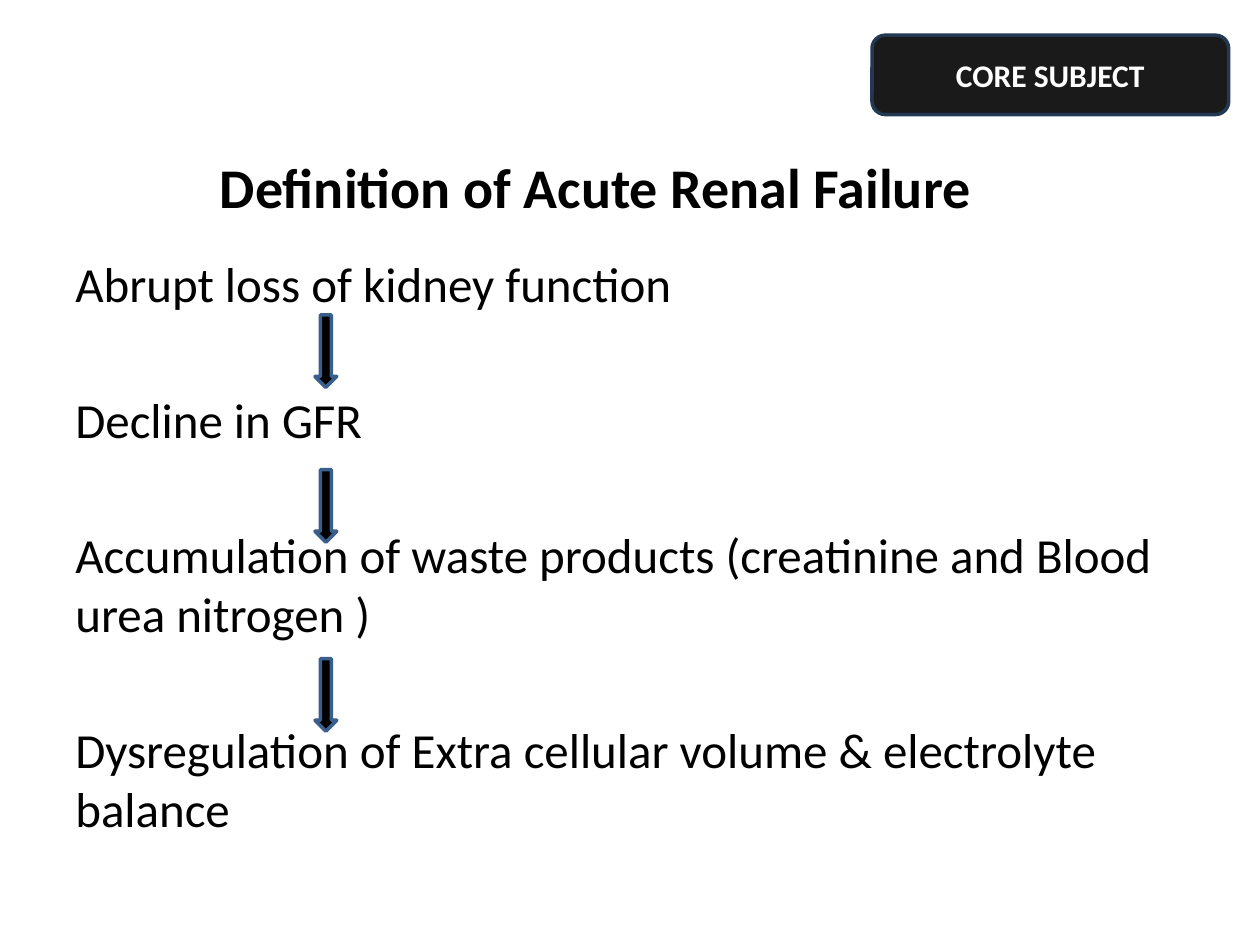
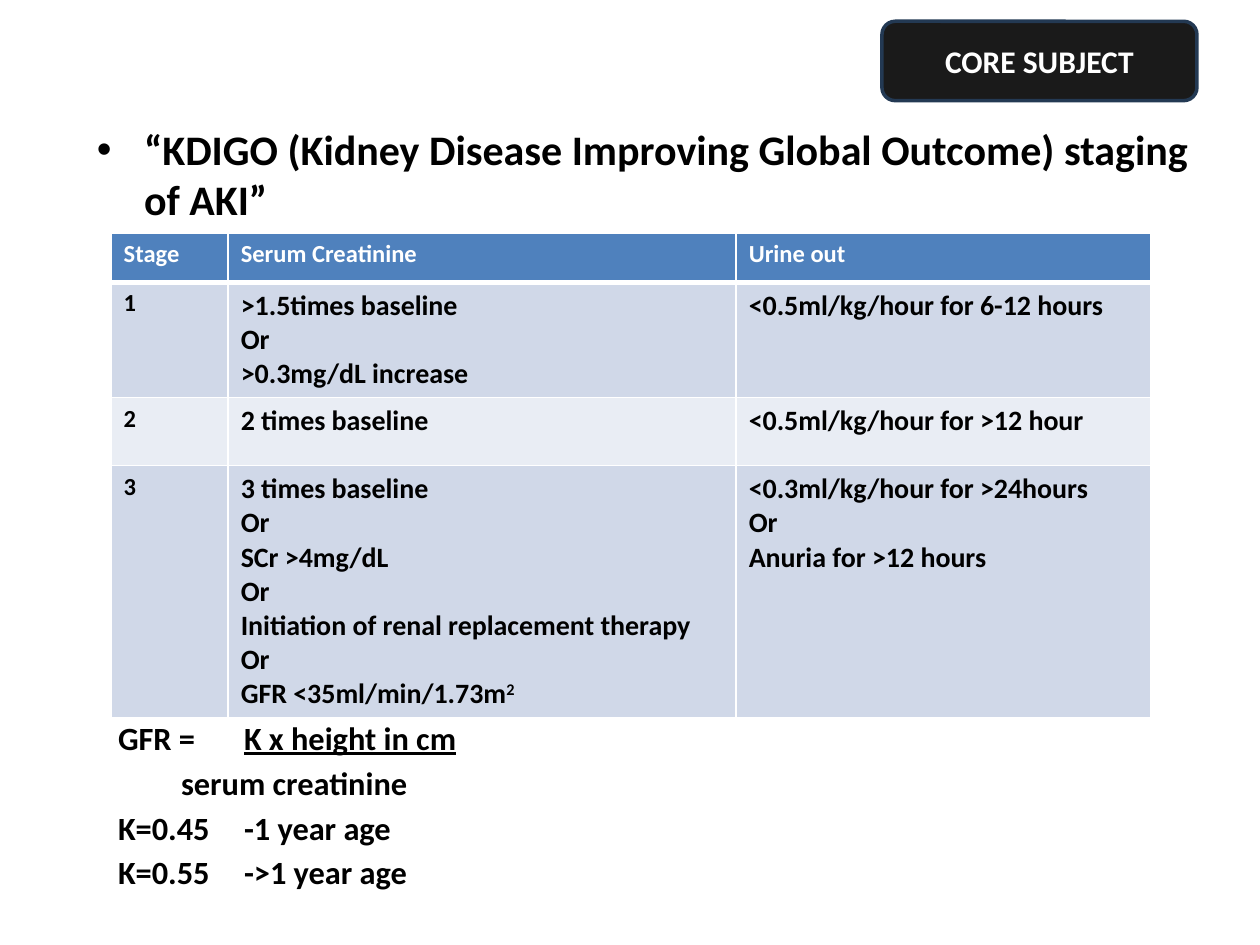
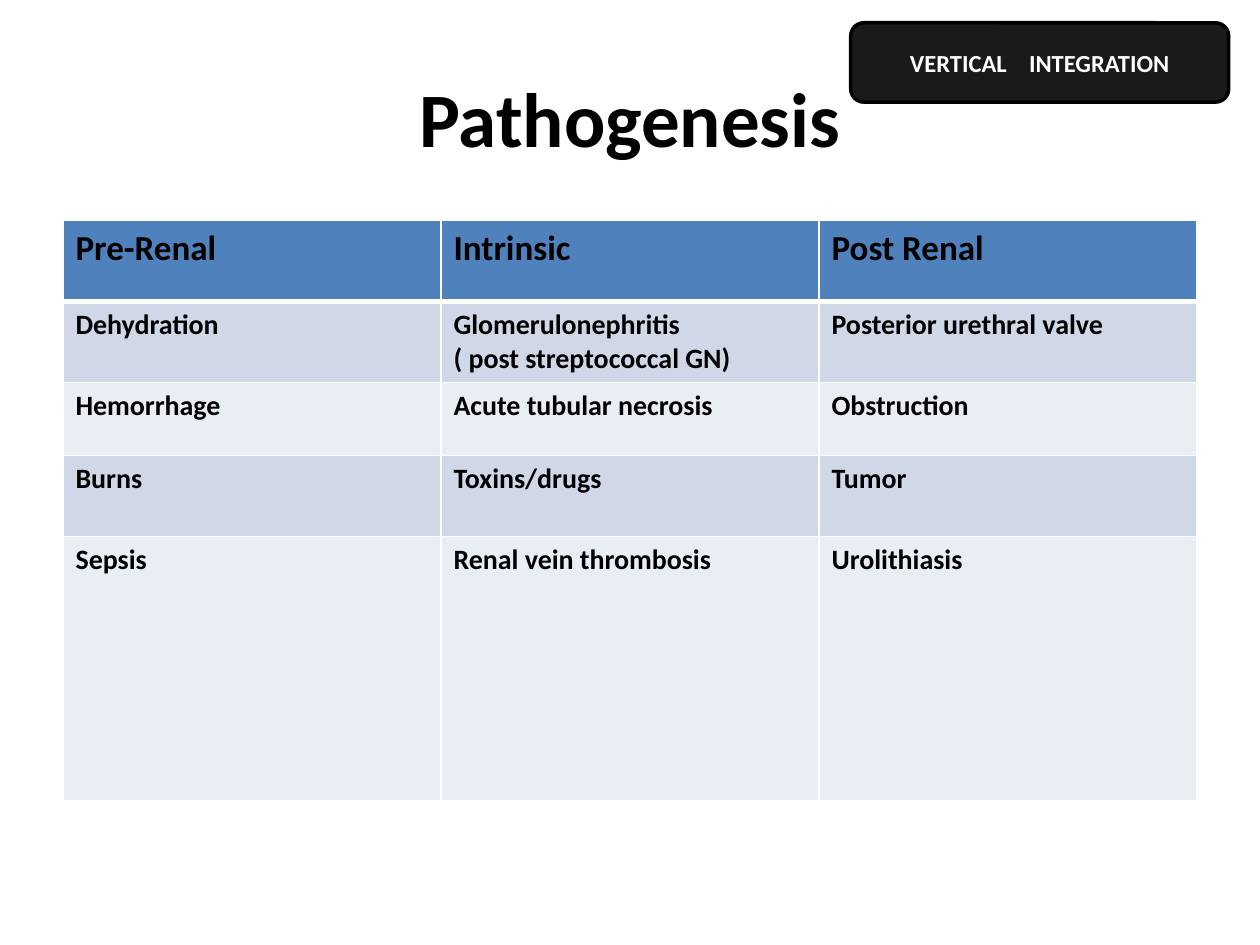
from dataclasses import dataclass
from typing import Sequence, Union

from lxml import etree
from pptx import Presentation
from pptx import util as u
from pptx.dml.color import RGBColor
from pptx.enum import shapes, text
from pptx.oxml.ns import qn

# Shared look
FONT = "Calibri"
BLACK, WHITE = "000000", "FFFFFF"
BADGE_FILL, BADGE_LINE, ARROW_LINE = "1A1A1A", "233953", "3A5F8C"
HEADER_FILL, BAND_FILLS = "4F81BD", ("D0D8E8", "E9EDF4")
TITLE_ONLY = 5
TITLE_WIDTH, BADGE_HEIGHT = 22.86, 1.6


@dataclass(frozen=True)
class Box:
    """Position and size in centimetres."""
    left: float
    top: float
    width: float
    height: float

    def lengths(self) -> list:
        return [u.Cm(value) for value in (self.left, self.top, self.width, self.height)]


@dataclass(frozen=True)
class Style:
    size: float
    color: str = BLACK
    bold: bool = True
    align: text.PP_ALIGN = text.PP_ALIGN.LEFT
    gap: float = 0  # points between paragraphs


@dataclass(frozen=True)
class Run:
    text: str
    underline: bool = False
    superscript: bool = False
    spacing: float = 0  # extra character spacing in points


Line = Union[str, Sequence[Run]]
Cell = Union[str, Sequence[Line]]


@dataclass(frozen=True)
class Badge:
    label: Line
    left: float
    top: float
    width: float
    size: float = 18
    line: str = BADGE_LINE


@dataclass(frozen=True)
class Grid:
    left: float
    top: float
    columns: Sequence[float]
    rows: Sequence[float]
    header: Style
    body: Style
    first_column: Style


def rgb(value: str) -> RGBColor:
    return RGBColor.from_string(value)


# Text
def write_text(frame, lines: Sequence[Line], style: Style) -> None:
    frame.word_wrap = True
    for index, line in enumerate(lines):
        paragraph = frame.add_paragraph() if index else frame.paragraphs[0]
        paragraph.alignment = style.align
        if index and style.gap:
            paragraph.space_before = u.Pt(style.gap)
        for part in [Run(line)] if isinstance(line, str) else line:
            run = paragraph.add_run()
            run.text = part.text
            font = run.font
            font.name, font.size, font.bold = FONT, u.Pt(style.size), style.bold
            font.color.rgb = rgb(style.color)
            if part.underline:
                font.underline = True
            properties = run._r.get_or_add_rPr()
            if part.superscript:
                properties.set("baseline", "30000")
            if part.spacing:
                properties.set("spc", str(round(part.spacing * 100)))


def add_text_box(slide, box: Box, lines: Sequence[Line], style: Style) -> None:
    write_text(slide.shapes.add_textbox(*box.lengths()).text_frame, lines, style)


def set_bullet(paragraph, indent: float) -> None:
    properties = paragraph._p.get_or_add_pPr()
    properties.set("marL", str(u.Cm(indent)))
    properties.set("indent", str(-u.Cm(indent)))
    etree.SubElement(properties, qn("a:buFont"), typeface="Arial")
    etree.SubElement(properties, qn("a:buChar"), char="•")


# Slide parts
def add_slide(presentation, title: str, box: Box, style: Style,
              anchor: text.MSO_ANCHOR = text.MSO_ANCHOR.MIDDLE):
    slide = presentation.slides.add_slide(presentation.slide_layouts[TITLE_ONLY])
    shape = slide.shapes.title
    shape.left, shape.top, shape.width, shape.height = box.lengths()
    frame = shape.text_frame
    frame.auto_size = text.MSO_AUTO_SIZE.NONE
    frame.vertical_anchor = anchor
    write_text(frame, [title], style)
    return slide


def add_preset(slide, kind: shapes.MSO_SHAPE, box: Box, fill: str, line: str):
    shape = slide.shapes.add_shape(kind, *box.lengths())
    shape.shadow.inherit = False
    shape.fill.solid()
    shape.fill.fore_color.rgb = rgb(fill)
    shape.line.color.rgb = rgb(line)
    shape.line.width = u.Pt(2)
    return shape


def add_badge(slide, badge: Badge) -> None:
    box = Box(badge.left, badge.top, badge.width, BADGE_HEIGHT)
    shape = add_preset(slide, shapes.MSO_SHAPE.ROUNDED_RECTANGLE, box, BADGE_FILL, badge.line)
    shape.text_frame.vertical_anchor = text.MSO_ANCHOR.MIDDLE
    write_text(shape.text_frame, [badge.label],
               Style(badge.size, WHITE, align=text.PP_ALIGN.CENTER))


def set_borders(cell, top: float, bottom: float) -> None:
    properties = cell._tc.get_or_add_tcPr()
    for side, width in (("L", 1), ("R", 1), ("T", top), ("B", bottom)):
        border = etree.SubElement(properties, qn(f"a:ln{side}"), w=str(u.Pt(width)))
        fill = etree.SubElement(border, qn("a:solidFill"))
        etree.SubElement(fill, qn("a:srgbClr"), val=WHITE)


def add_grid(slide, grid: Grid, rows: Sequence[Sequence[Cell]]) -> None:
    box = Box(grid.left, grid.top, sum(grid.columns), sum(grid.rows))
    table = slide.shapes.add_table(len(grid.rows), len(grid.columns), *box.lengths()).table
    for column, width in zip(table.columns, grid.columns):
        column.width = u.Cm(width)
    for row_index, (row, height, contents) in enumerate(zip(table.rows, grid.rows, rows)):
        row.height = u.Cm(height)
        for column_index, (cell, content) in enumerate(zip(row.cells, contents)):
            set_borders(cell, top=3 if row_index == 1 else 1, bottom=1 if row_index else 3)
            cell.fill.solid()
            fill = BAND_FILLS[(row_index - 1) % 2] if row_index else HEADER_FILL
            cell.fill.fore_color.rgb = rgb(fill)
            style = grid.body if column_index else grid.first_column
            lines = [content] if isinstance(content, str) else content
            write_text(cell.text_frame, lines, style if row_index else grid.header)


# Slides
def build_definition(presentation) -> None:
    slide = add_slide(presentation, "Definition of Acute Renal Failure",
                      Box(0.58, 2.16, TITLE_WIDTH, 3.18),
                      Style(32, align=text.PP_ALIGN.CENTER))
    steps = [
        "Abrupt loss of kidney function",
        "Decline in GFR",
        "Accumulation of waste products (creatinine and Blood urea nitrogen )",
        "Dysregulation of Extra cellular volume & electrolyte balance",
    ]
    add_text_box(slide, Box(1.27, 4.98, 22.86, 12.5), steps, Style(28, bold=False, gap=44))
    for top in (6.35, 9.47, 13.28):
        add_preset(slide, shapes.MSO_SHAPE.DOWN_ARROW, Box(6.35, top, 0.44, 1.46),
                   BLACK, ARROW_LINE)
    add_badge(slide, Badge("CORE SUBJECT", 17.58, 0.71, 7.19))


def build_staging(presentation) -> None:
    slide = add_slide(presentation,
                      "“KDIGO (Kidney Disease Improving Global Outcome) staging of AKI”",
                      Box(1.7, 2.36, TITLE_WIDTH, 2.34), Style(24), text.MSO_ANCHOR.TOP)
    set_bullet(slide.shapes.title.text_frame.paragraphs[0], 0.95)
    grid = Grid(2.24, 4.7, (2.36, 10.24, 8.36), (0.99, 2.21, 1.37, 4.9),
                header=Style(14, WHITE), body=Style(16), first_column=Style(14))
    add_grid(slide, grid, [
        ["Stage", "Serum Creatinine", "Urine out"],
        ["1", [">1.5times baseline", "Or", ">0.3mg/dL increase"],
         "<0.5ml/kg/hour for 6-12 hours"],
        ["2", "2 times baseline", "<0.5ml/kg/hour for >12 hour"],
        ["3",
         ["3 times baseline", "Or", "SCr >4mg/dL", "Or",
          "Initiation of renal replacement therapy", "Or",
          [Run("GFR <35ml/min/1.73m"), Run("2", superscript=True)]],
         ["<0.3ml/kg/hour for >24hours", "Or", "Anuria for >12 hours"]],
    ])
    formula = [
        [Run("GFR =\t"), Run("K x height in cm", underline=True)],
        "\tserum creatinine",
        "K=0.45\t-1 year age",
        "K=0.55\t->1 year age",
    ]
    add_text_box(slide, Box(2.13, 14.35, 22, 3.66), formula, Style(18.5, gap=3.4))
    add_badge(slide, Badge("CORE SUBJECT", 17.78, 0.43, 6.35))


def build_pathogenesis(presentation) -> None:
    slide = add_slide(presentation, "Pathogenesis", Box(1.27, 0.76, TITLE_WIDTH, 3.18),
                      Style(44, align=text.PP_ALIGN.CENTER))
    grid = Grid(1.27, 4.45, (7.62,) * 3, (1.63, 1.63, 1.47, 1.63, 5.33),
                header=Style(20), body=Style(16), first_column=Style(16))
    add_grid(slide, grid, [
        ["Pre-Renal", "Intrinsic", "Post Renal"],
        ["Dehydration", ["Glomerulonephritis", "( post streptococcal GN)"],
         "Posterior urethral valve"],
        ["Hemorrhage", "Acute tubular necrosis", "Obstruction"],
        ["Burns", "Toxins/drugs", "Tumor"],
        ["Sepsis", "Renal vein thrombosis", "Urolithiasis"],
    ])
    label = [Run("VERTICAL"), Run(" ", spacing=9.5), Run("INTEGRATION")]
    add_badge(slide, Badge(label, 17.15, 0.46, 7.62, size=14, line=BLACK))


def main() -> None:
    presentation = Presentation()
    presentation.slide_width, presentation.slide_height = u.Cm(25.4), u.Cm(19.05)
    build_definition(presentation)
    build_staging(presentation)
    build_pathogenesis(presentation)
    presentation.save("out.pptx")


if __name__ == "__main__":
    main()
